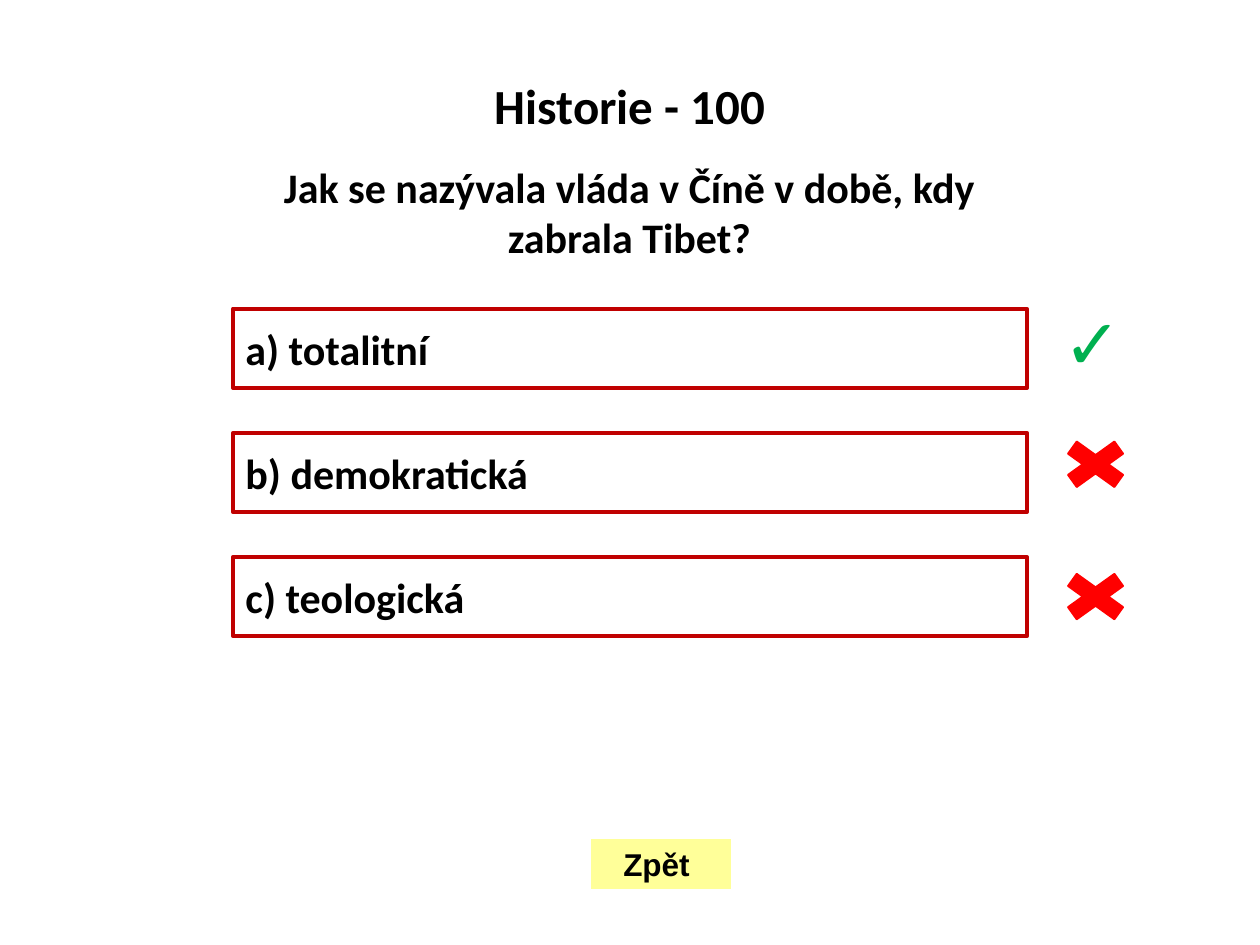
from dataclasses import dataclass
from typing import Optional

from pptx import Presentation
from pptx.dml.color import RGBColor as RGB
from pptx.enum.shapes import MSO_SHAPE as Shape
from pptx.enum.text import MSO_ANCHOR as Anchor, PP_ALIGN as Align
from pptx.util import Inches, Pt


@dataclass(frozen=True)
class Theme:
    text: RGB = RGB(0x00, 0x00, 0x00)
    border: RGB = RGB(0xC0, 0x00, 0x00)
    right: RGB = RGB(0x00, 0xB0, 0x50)
    wrong: RGB = RGB(0xFF, 0x00, 0x00)
    back: RGB = RGB(0xFF, 0xFF, 0x99)
    font: str = "Calibri"
    alt_font: str = "Arial"
    title_size: int = 28
    body_size: int = 24
    back_size: int = 18
    check_size: int = 40


@dataclass(frozen=True)
class Box:
    left: float
    top: float
    width: float
    height: float

    def emu(self) -> tuple:
        return tuple(Inches(v) for v in (self.left, self.top, self.width, self.height))


@dataclass(frozen=True)
class Answer:
    text: str
    cross_top: Optional[float] = None  # None for the correct answer


THEME = Theme()
ANSWERS = [
    Answer("a) totalitní"),
    Answer("b) demokratická\u00a0".rstrip(), 3.43),
    Answer("c) teologická", 4.48),
]
ANSWER_TOP, ANSWER_STEP = 2.45, 0.985
MARK_LEFT = 8.34


def write(s, text: str, size: int, font: str = THEME.font,
          color: RGB = THEME.text, align: Align = Align.LEFT):
    p = s.text_frame.paragraphs[0]
    p.text = text
    p.alignment = align
    p.font.name, p.font.size, p.font.bold = font, Pt(size), True
    p.font.color.rgb = color
    return p


def add_text(slide, box: Box, text: str, size: int, **style):
    s = slide.shapes.add_textbox(*box.emu())
    s.text_frame.word_wrap = True
    return write(s, text, size, **style)


def add_shape(slide, kind: Shape, box: Box, fill: Optional[RGB] = None,
              line: Optional[RGB] = None, width: float = 1):
    s = slide.shapes.add_shape(kind, *box.emu())
    s.shadow.inherit = False
    if fill is None:
        s.fill.background()
    else:
        s.fill.solid()
        s.fill.fore_color.rgb = fill
    if line is None:
        s.line.fill.background()
    else:
        s.line.color.rgb = line
        s.line.width = Pt(width)
    return s


def add_button(slide, box: Box, text: str, size: int, font: str = THEME.font,
               align: Align = Align.LEFT, **look) -> None:
    s = add_shape(slide, Shape.ACTION_BUTTON_CUSTOM, box, **look)
    s.text_frame.word_wrap = False
    s.text_frame.vertical_anchor = Anchor.MIDDLE
    write(s, text, size, font, align=align)


def main() -> None:
    prs = Presentation()
    prs.slide_width, prs.slide_height = Inches(10), Inches(7.5)
    slide = prs.slides.add_slide(prs.slide_layouts[6])

    # Category and question
    p = add_text(slide, Box(0, 0.6, 10, 0.79), "Historie - 100",
                 THEME.title_size, align=Align.CENTER)
    p.line_spacing, p.space_before = 0.9, Pt(10)
    add_text(slide, Box(1.69, 1.23, 6.61, 0.91),
             "Jak se nazývala vláda v Číně v době, kdy zabrala Tibet?",
             THEME.body_size, align=Align.CENTER)

    # Answers with their marks
    for i, answer in enumerate(ANSWERS):
        box = Box(1.85, ANSWER_TOP + i * ANSWER_STEP, 6.3, 0.63)
        add_button(slide, box, answer.text, THEME.body_size,
                   line=THEME.border, width=2.25)
        if answer.cross_top is None:
            add_text(slide, Box(MARK_LEFT, 2.33, 0.59, 0.77), "✓",
                     THEME.check_size, font=THEME.alt_font, color=THEME.right)
        else:
            add_shape(slide, Shape.MATH_MULTIPLY,
                      Box(MARK_LEFT, answer.cross_top, 0.71, 0.51),
                      fill=THEME.wrong, line=THEME.wrong)

    # Back button
    add_button(slide, Box(4.69, 6.66, 1.11, 0.4), "Zpět ", THEME.back_size,
               THEME.alt_font, Align.CENTER, fill=THEME.back)

    prs.save("out.pptx")


if __name__ == "__main__":
    main()
